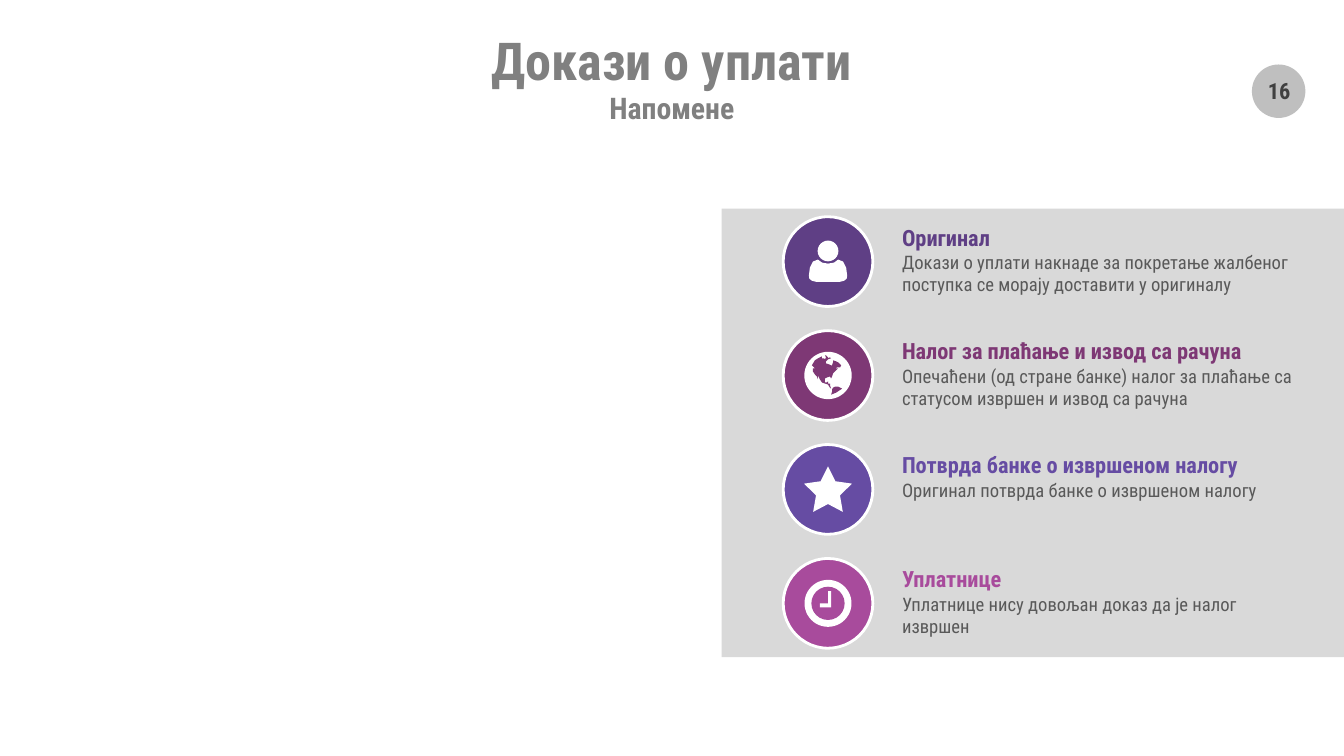
"""Build the slide of notes on proofs of payment."""
from dataclasses import dataclass
from math import cos, pi, sin
from typing import Callable

from pptx import Presentation
from pptx.dml.color import RGBColor
from pptx.enum.shapes import MSO_SHAPE
from pptx.enum.text import MSO_ANCHOR, MSO_AUTO_SIZE, PP_ALIGN
from pptx.util import Inches, Pt

WIDTH, HEIGHT = Inches(13.333), Inches(7.5)

Points = list[tuple[float, float]]


@dataclass(frozen=True)
class Theme:
    font: str = "Roboto Condensed"
    white: str = "FFFFFF"
    panel: str = "D9D9D9"
    badge: str = "BFBFBF"
    badge_text: str = "404040"
    title: str = "808080"
    detail: str = "595959"
    title_size: float = 37.3
    subtitle_size: float = 21.3
    heading_size: float = 16
    detail_size: float = 13.3


@dataclass(frozen=True)
class Box:
    """Place on the slide, in percent of its width and height."""
    left: float
    top: float
    width: float
    height: float

    def emu(self) -> tuple[int, int, int, int]:
        return across(self.left), down(self.top), across(self.width), down(self.height)


@dataclass(frozen=True)
class Note:
    heading: str
    heading_width: float
    detail: str
    lines: int
    color: str
    draw_icon: Callable


THEME = Theme()
CENTER_X, FIRST_CENTER_Y, ROW_PITCH = 61.61, 34.6, 15.07
CIRCLE_WIDTH, CIRCLE_HEIGHT = 6.67, 11.87
TEXT_LEFT, DETAIL_WIDTH = 66.38, 30.83
ICON_UNIT = 0.075

SHOULDERS: Points = [
    (-12, 20), (-16, 19), (-18.5, 17), (-19, 14), (-18, 6), (-15, 0), (-10, -2), (-6, 1), (0, 2),
    (6, 1), (10, -2), (15, 0), (18, 6), (19, 14), (18.5, 17), (16, 19), (12, 20)]
NORTH_LAND: Points = [
    (7, -7), (9, -8), (12, -8), (13, -10), (11, -12), (10, -13), (8, -14), (5, -15), (5, -13),
    (4, -10), (3, -10), (1, -11), (-2, -12), (-2, -14), (0, -16), (3, -17), (2, -18), (0, -17),
    (0, -18), (-2, -20), (-3, -20), (-2, -18), (-3, -16), (-4, -17), (-6, -17), (-6, -19),
    (-10, -17), (-13, -15), (-16, -10), (-14, -8), (-13, -7), (-15, -7), (-15, -4), (-13, -1),
    (-11, 1), (-10, 4), (-10, 0), (-8, 4), (-6, 7), (-3, 8), (0, 9), (1, 11), (3, 13), (2, 10),
    (2, 8), (0, 8), (0, 6), (-1, 7), (-3, 7), (-3, 3), (-1, 2), (2, 1), (3, 3), (4, 1), (5, -2),
    (7, -4), (10, -7)]
SOUTH_LAND: Points = [
    (14, 13), (12, 12), (10, 11), (7, 11), (5, 12), (4, 14), (4, 16), (3, 19), (8, 17)]
CLOCK_HANDS: Points = [(0, -12), (3, -12), (3, 4), (-8, 4), (-8, 0), (0, 0)]


def across(share: float) -> int:
    return round(WIDTH * share / 100)


def down(share: float) -> int:
    return round(HEIGHT * share / 100)


def paint(shape, fill: str, line: str | None = None) -> None:
    shape.shadow.inherit = False
    shape.fill.solid()
    shape.fill.fore_color.rgb = RGBColor.from_string(fill)
    if line:
        shape.line.color.rgb = RGBColor.from_string(line)
        shape.line.width = Pt(2)
    else:
        shape.line.fill.background()


def add_preset(page, kind: MSO_SHAPE, box: Box, fill: str, line: str | None = None) -> None:
    paint(page.shapes.add_shape(kind, *box.emu()), fill, line)


def add_text(page, text: str, box: Box, *, size: float, color: str, bold: bool = True,
             align: PP_ALIGN = PP_ALIGN.LEFT, anchor: MSO_ANCHOR = MSO_ANCHOR.TOP,
             wrap: bool = True, grow: bool = False, inset: float | None = None) -> None:
    frame = page.shapes.add_textbox(*box.emu()).text_frame
    frame.word_wrap = wrap
    frame.auto_size = MSO_AUTO_SIZE.SHAPE_TO_FIT_TEXT if grow else MSO_AUTO_SIZE.NONE
    frame.vertical_anchor = anchor
    if inset is not None:
        frame.margin_left = frame.margin_right = Inches(inset)
        frame.margin_top = frame.margin_bottom = Inches(inset / 2)
    para = frame.paragraphs[0]
    para.alignment = align
    span = para.add_run()
    span.text = text
    span.font.name, span.font.size, span.font.bold = THEME.font, Pt(size), bold
    span.font.color.rgb = RGBColor.from_string(color)


def add_outline(page, points: Points, center_y: float, fill: str) -> None:
    unit = across(ICON_UNIT)
    corners = [(across(CENTER_X) + x * unit, down(center_y) + y * unit) for x, y in points]
    builder = page.shapes.build_freeform(*corners[0], scale=1.0)
    builder.add_line_segments(corners[1:], close=True)
    paint(builder.convert_to_shape(), fill)


def add_disc(page, radius: float, center_y: float, fill: str, rise: float = 0):
    unit = across(ICON_UNIT)
    left = across(CENTER_X) - round(radius * unit)
    top = down(center_y) - round((radius + rise) * unit)
    side = round(2 * radius * unit)
    kind = MSO_SHAPE.OVAL
    disc = page.shapes.add_shape(kind, left, top, side, side)
    paint(disc, fill)


def draw_person(page, center_y: float, color: str) -> None:
    add_outline(page, SHOULDERS, center_y, THEME.white)
    add_disc(page, 10.3, center_y, THEME.white, rise=10.5)


def draw_globe(page, center_y: float, color: str) -> None:
    add_disc(page, 23.5, center_y, THEME.white)
    for land in (NORTH_LAND, SOUTH_LAND):
        add_outline(page, land, center_y, color)


def draw_star(page, center_y: float, color: str) -> None:
    tips = [(25 if step % 2 == 0 else 12.5, step * pi / 5) for step in range(10)]
    points = [(radius * sin(angle), 2 - radius * cos(angle)) for radius, angle in tips]
    add_outline(page, points, center_y, THEME.white)


def draw_clock(page, center_y: float, color: str) -> None:
    add_disc(page, 23.3, center_y, THEME.white)
    add_disc(page, 16.5, center_y, color)
    add_outline(page, CLOCK_HANDS, center_y, THEME.white)


NOTES = [
    Note("Оригинал", 8.18, "Докази о уплати накнаде за покретање жалбеног поступка "
         "се морају доставити у оригиналу", 2, "5F3F85", draw_person),
    Note("Налог за плаћање и извод са рачуна", 27.23, "Опечаћени (од стране банке) налог за "
         "плаћање са статусом извршен и извод са рачуна", 2, "7E3875", draw_globe),
    Note("Потврда банке о извршеном налогу", 26.93,
         "Оригинал потврда банке о извршеном налогу", 1, "664CA3", draw_star),
    Note("Уплатнице", 9.08, "Уплатнице нису довољан доказ да је налог извршен",
         2, "A84B9C", draw_clock),
]


def add_note(page, note: Note, center_y: float) -> None:
    circle = Box(CENTER_X - CIRCLE_WIDTH / 2, center_y - CIRCLE_HEIGHT / 2,
                 CIRCLE_WIDTH, CIRCLE_HEIGHT)
    add_preset(page, MSO_SHAPE.OVAL, circle, note.color, THEME.white)
    note.draw_icon(page, center_y, note.color)
    add_text(page, note.detail,
             Box(TEXT_LEFT, center_y - 2.07, DETAIL_WIDTH, 1.47 + 2.93 * note.lines),
             size=THEME.detail_size, color=THEME.detail, bold=False, grow=True)
    add_text(page, note.heading, Box(TEXT_LEFT, center_y - 5.67, note.heading_width, 4.93),
             size=THEME.heading_size, color=note.color, wrap=False, grow=True)


def main() -> None:
    deck = Presentation()
    deck.slide_width, deck.slide_height = WIDTH, HEIGHT
    page = deck.slides.add_slide(deck.slide_layouts[6])
    centered = {"align": PP_ALIGN.CENTER, "anchor": MSO_ANCHOR.MIDDLE}
    add_preset(page, MSO_SHAPE.OVAL, Box(93.15, 8.53, 3.98, 7.07), THEME.badge)
    add_text(page, "16", Box(92.85, 8.8, 4.65, 6.4), size=THEME.heading_size,
             color=THEME.badge_text, inset=0.13, **centered)
    add_text(page, "Докази о уплати", Box(23.93, 3.87, 52.05, 8.13), size=THEME.title_size,
             color=THEME.title, wrap=False, inset=0, **centered)
    add_text(page, "Напомене", Box(35.78, 12.27, 28.43, 3.87), size=THEME.subtitle_size,
             color=THEME.title, inset=0, **centered)
    add_preset(page, MSO_SHAPE.RECTANGLE, Box(53.7, 27.6, 46.3, 59.33), THEME.panel)
    for row, note in enumerate(NOTES):
        add_note(page, note, FIRST_CENTER_Y + row * ROW_PITCH)
    deck.save("out.pptx")


if __name__ == "__main__":
    main()
